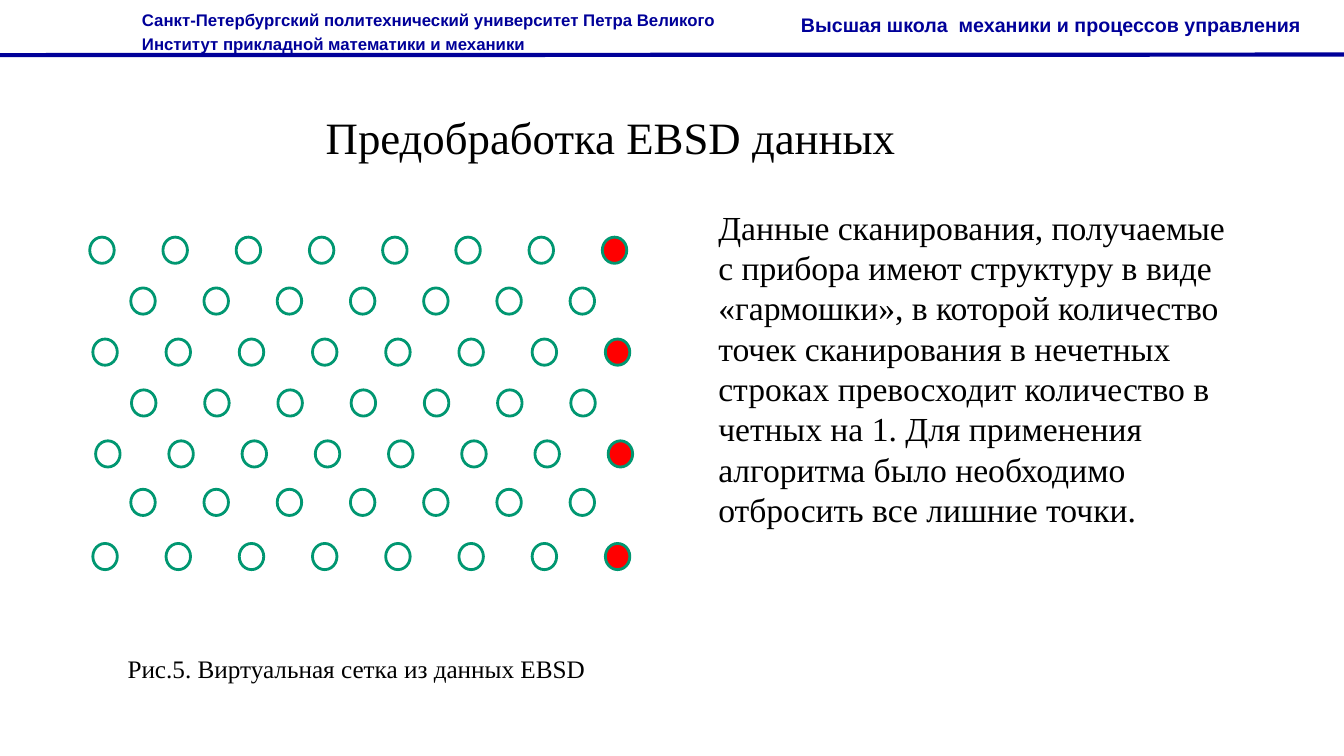
import pptx
import pptx.util
import pptx.dml.color
import pptx.enum.shapes
import pptx.enum.text
import pptx.oxml

Pt = pptx.util.Pt


def color(value):
    return pptx.dml.color.RGBColor.from_string(value)


def write(box, text, font, spacing=1.0, wrap=True):
    frame = box.text_frame
    frame.word_wrap = wrap
    frame.auto_size = pptx.enum.text.MSO_AUTO_SIZE.NONE
    frame.vertical_anchor = pptx.enum.text.MSO_ANCHOR.TOP
    frame.text = text
    paragraph = frame.paragraphs[0]
    paragraph.alignment = pptx.enum.text.PP_ALIGN.LEFT
    paragraph.line_spacing = spacing
    paragraph.space_before = Pt(0)
    for run in paragraph.runs:
        run.font.color.rgb = color(NAVY if font is HEADER else BLACK)
        for key, value in font.items():
            setattr(run.font, key, value)


NAVY, BLACK, WHITE, RED, GREEN = "000099", "000000", "FFFFFF", "FF0000", "009771"
HEADER = {"name": "Arial", "bold": True}
SERIF = {"name": "Times New Roman", "bold": False}

presentation = pptx.Presentation()
presentation.slide_width = Pt(960)
presentation.slide_height = Pt(540)
slide = presentation.slides.add_slide(presentation.slide_layouts[5])
shapes = slide.shapes

header_rule = shapes.add_connector(
    pptx.enum.shapes.MSO_CONNECTOR.STRAIGHT, Pt(0), Pt(39.4), Pt(960), Pt(39))
header_rule.line.color.rgb = color(NAVY)
header_rule.line.width = Pt(3)
header_rule._element.spPr.append(pptx.oxml.parse_xml(
    '<a:effectLst xmlns:a="http://schemas.openxmlformats.org/drawingml/2006/main"/>'))

title = shapes.title
title.left, title.top, title.width, title.height = Pt(225.4), Pt(75), Pt(499), Pt(46)
write(title, "Предобработка EBSD данных", SERIF | {"size": Pt(32)})

university = shapes.add_textbox(Pt(94.3), Pt(0.7), Pt(444), Pt(40.3))
school = shapes.add_textbox(Pt(565), Pt(2.2), Pt(395), Pt(27.4))
for header, text, size in (
    (university, "Санкт-Петербургский политехнический университет Петра Великого\v"
                 "Институт прикладной математики и механики", 12),
    (school, "Высшая школа  механики и процессов управления", 14),
):
    HEADER["size"] = Pt(size)
    write(header, text, HEADER, 1.2, header is university)

description = shapes.add_textbox(Pt(506), Pt(144), Pt(388), Pt(343))
write(description,
      "Данные сканирования, получаемые с прибора имеют структуру в виде «гармошки», "
      "в которой количество точек сканирования в нечетных строках превосходит "
      "количество в четных на 1. Для применения алгоритма было необходимо отбросить "
      "все лишние точки.", SERIF | {"size": Pt(24)})

scan_rows = [(64.1, 169.4), (93.4, 205.7), (66.3, 242.2), (93.9, 278.5),
             (68.3, 314.9), (93.4, 349.5), (66.3, 388.2)]
for row, (left, top) in enumerate(scan_rows):
    odd_row = row % 2 == 0
    for column in range(8 if odd_row else 7):
        point = shapes.add_shape(
            pptx.enum.shapes.MSO_SHAPE.OVAL,
            Pt(round(left + column * 52.3, 2)), Pt(top), Pt(17.5), Pt(18.7))
        point.shadow.inherit = False
        point.fill.solid()
        point.fill.fore_color.rgb = color(RED if column == 7 else WHITE)
        point.line.color.rgb = color(GREEN)
        point.line.width = Pt(2)

caption = shapes.add_textbox(Pt(84), Pt(463), Pt(345), Pt(29))
write(caption, "Рис.5. Виртуальная сетка из данных EBSD", SERIF | {"size": Pt(18)},
      wrap=False)

presentation.save("out.pptx")
